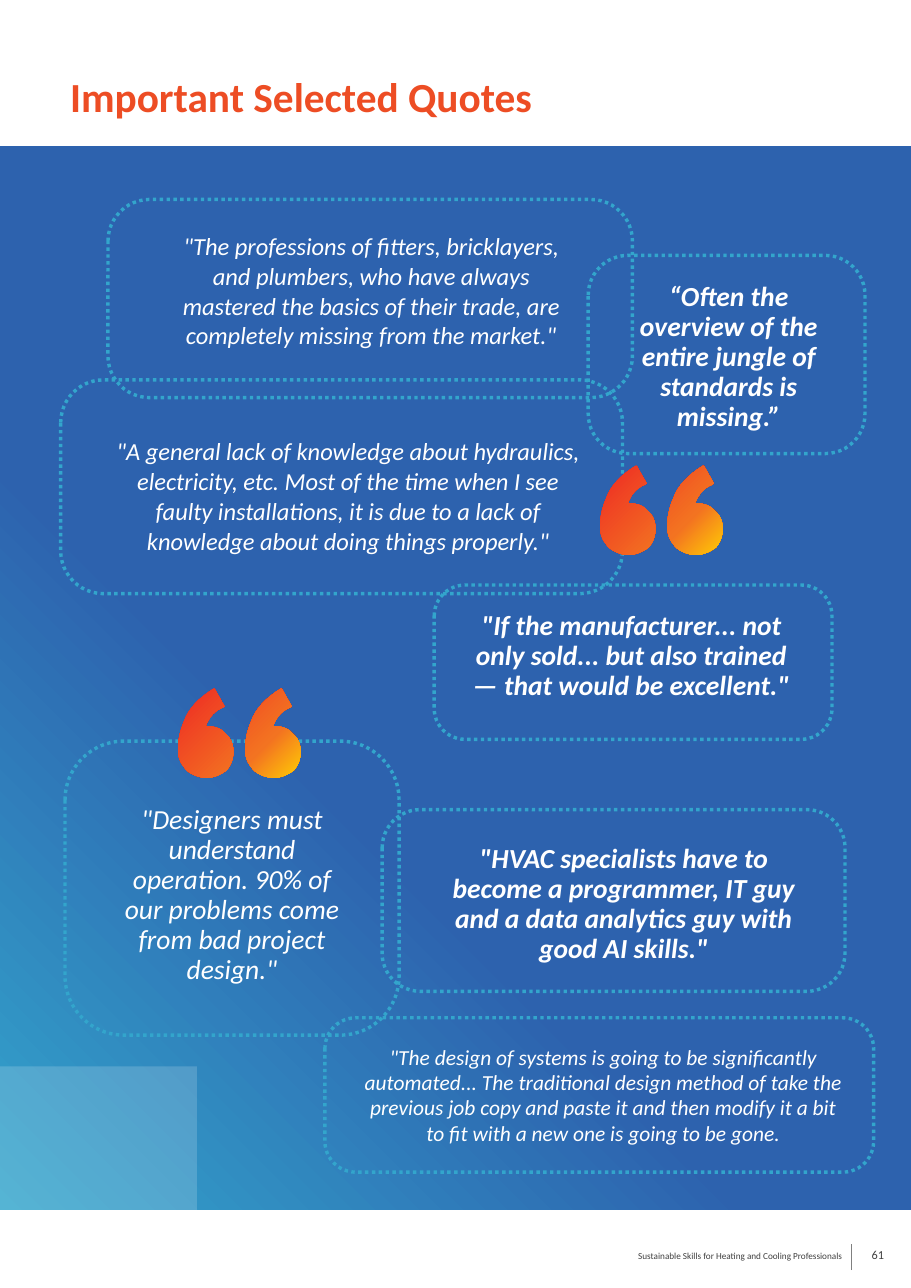
import pptx
import pptx.util
import pptx.dml.color
import pptx.enum.dml
import pptx.enum.shapes
import pptx.enum.text
import pptx.oxml
import pptx.oxml.ns

Cm, Pt = pptx.util.Cm, pptx.util.Pt
RGB = pptx.dml.color.RGBColor.from_string
SHAPE = pptx.enum.shapes.MSO_SHAPE
ALIGN = pptx.enum.text.PP_ALIGN
ANCHOR = pptx.enum.text.MSO_ANCHOR
qn = pptx.oxml.ns.qn
NS = pptx.oxml.ns.nsdecls("a")

COLORS = {
    "blue": "2D62AE", "aqua": "33A5CC", "white": "FFFFFF", "title": "ED4D24",
    "red": "EE2D24", "orange": "F37321", "yellow": "FFCD05",
    "text": "404040", "rule": "808080",
}


def write(box, words, size, color, align, bold=False, italic=False, lead=None):
    frame = box.text_frame
    frame.word_wrap = True
    para = frame.paragraphs[0]
    para.alignment = align
    para.space_before = Pt(0)
    if lead:
        para.line_spacing = Pt(lead)
    run = para.add_run()
    run.text = words
    font = run.font
    font.name, font.size, font.bold, font.italic = "Calibri", Pt(size), bold, italic
    font.color.rgb = RGB(COLORS[color])


def shade(shape, stops, angle):
    shape.shadow.inherit = False
    shape.line.fill.background()
    shape.fill.gradient()
    shape.fill.gradient_angle = angle
    items = shape._element.spPr.find(".//" + qn("a:gsLst"))
    for old in list(items):
        items.remove(old)
    for pos, color in stops:
        items.append(pptx.oxml.parse_xml(
            f'<a:gs {NS} pos="{pos * 1000}"><a:srgbClr val="{COLORS[color]}"/></a:gs>'))


prs = pptx.Presentation()
prs.slide_width, prs.slide_height = Cm(21), Cm(29.7)
slide = prs.slides.add_slide(prs.slide_layouts[5])
shapes = slide.shapes

# Title
title = shapes.title
title.left, title.top, title.width, title.height = Cm(1.36), Cm(1.75), Cm(15.5), Cm(1.5)
title.text_frame.vertical_anchor = ANCHOR.TOP
write(title, "Important Selected Quotes", 27, "title", ALIGN.LEFT, bold=True, lead=26)

# Blue panel
panel = shapes.add_shape(SHAPE.RECTANGLE, Cm(0), Cm(3.37), Cm(21), Cm(24.53))
shade(panel, [(62, "blue"), (100, "aqua")], 225)

# Pale corner block
block = shapes.add_shape(SHAPE.RECTANGLE, Cm(0), Cm(24.59), Cm(4.54), Cm(3.31))
block.shadow.inherit = False
block.line.fill.background()
block.fill.solid()
block.fill.fore_color.rgb = RGB(COLORS["white"])
tint = block._element.spPr.find(".//" + qn("a:srgbClr"))
tint.append(pptx.oxml.parse_xml(f'<a:alpha {NS} val="17000"/>'))

# Quotes: frame box, corner, text box, size, bold, line spacing, words
QUOTES = [
    ((13.56, 5.89, 6.38, 4.57), 0.2, (14.12, 6.38, 5.36, 5.23), 18, True, 19.6,
     "“Often the overview of the entire jungle of standards is missing.”"),
    ((2.49, 4.6, 12.09, 4.57), 0.21, (3.76, 5.18, 9.6, 4.5), 16, False, 19.6,
     '"The professions of fitters, bricklayers, and plumbers, who have always '
     'mastered the basics of their trade, are completely missing from the market."'),
    ((1.4, 8.76, 12.95, 4.93), 0.2, (2.26, 9.91, 11.53, 3.78), 16, False, 19.6,
     '"A general lack of knowledge about hydraulics, electricity, etc. Most of the '
     'time when I see faulty installations, it is due to a lack of knowledge about '
     'doing things properly."'),
    ((10.01, 13.49, 9.17, 3.56), 0.2, (10.54, 13.97, 8.03, 3.1), 18, True, 19.6,
     '"If the manufacturer... not only sold... but also trained — that would be '
     'excellent."'),
    ((1.5, 17.09, 7.7, 6.78), 0.2, (2.34, 18.44, 6.02, 5.23), 18, False, 19.6,
     '"Designers must understand operation. 90% of our problems come from bad '
     'project design."'),
    ((8.81, 18.67, 10.67, 4.19), 0.21, (9.91, 19.33, 8.94, 3.81), 18, True, 19.6,
     '"HVAC specialists have to become a programmer, IT guy and a data analytics '
     'guy with good AI skills."'),
    ((7.49, 23.47, 12.65, 3.56), 0.2, (8.13, 23.95, 11.56, 3.28), 14, False, 16.6,
     '"The design of systems is going to be significantly automated... The '
     'traditional design method of take the previous job copy and paste it and then '
     'modify it a bit to fit with a new one is going to be gone.'),
]
for area, corner, place, size, bold, lead, words in QUOTES:
    frame = shapes.add_shape(SHAPE.ROUNDED_RECTANGLE, *map(Cm, area))
    frame.adjustments[0] = corner
    frame.shadow.inherit = False
    frame.fill.background()
    frame.line.color.rgb = RGB(COLORS["aqua"])
    frame.line.width = Pt(2.25)
    frame.line.dash_style = pptx.enum.dml.MSO_LINE.ROUND_DOT
    box = shapes.add_textbox(*map(Cm, place))
    write(box, words, size, "white", ALIGN.CENTER, bold, True, lead)

# Outline of one quote mark: curves (six numbers) and lines (two numbers)
START = (26, 81)
PARTS = [
    (24, 81), (16, 80, 9, 77, 5, 71), (1, 66, -1, 60, 0, 51), (0, 45, 2, 37, 5, 30),
    (9, 18, 19, 8, 32, 0), (33, 0), (42, 16), (41, 17), (33, 20, 28, 26, 25, 34),
    (33, 34, 39, 36, 43, 41), (48, 45, 50, 51, 50, 57), (50, 64, 48, 69, 44, 74),
    (39, 78, 32, 81, 26, 81),
]
STEPS = 8
curve = [START]
for part in PARTS:
    if len(part) == 2:
        curve.append(part)
        continue
    knots = [curve[-1], part[:2], part[2:4], part[4:]]
    for step in range(1, STEPS + 1):
        t = step / STEPS
        mix = [(1 - t) ** 3, 3 * t * (1 - t) ** 2, 3 * t * t * (1 - t), t ** 3]
        curve.append(tuple(sum(m * k[i] for m, k in zip(mix, knots)) for i in (0, 1)))

# Pairs of quote marks
FINE, GAP = 100, 61
for left, top in [(13.84, 10.74), (4.11, 15.88)]:
    pen = None
    for shift in (0, GAP):
        dots = [((x + shift) * FINE, y * FINE) for x, y in curve]
        if pen is None:
            pen = shapes.build_freeform(*dots[0], scale=Cm(0.0254) / FINE)
        else:
            pen.move_to(*dots[0])
        pen.add_line_segments(dots[1:], close=True)
    mark = pen.convert_to_shape(Cm(left), Cm(top))
    shade(mark, [(3, "red"), (68, "orange"), (100, "yellow")], 315)

# Footer
foot = shapes.add_textbox(Cm(6.15), Cm(28.7), Cm(13.51), Cm(0.5))
write(foot, "Sustainable Skills for Heating and Cooling Professionals", 6, "text", ALIGN.RIGHT)
rule = shapes.add_connector(pptx.enum.shapes.MSO_CONNECTOR.STRAIGHT,
                            Cm(19.63), Cm(29.29), Cm(19.63), Cm(28.68))
rule.line.color.rgb = RGB(COLORS["rule"])
rule.line.width = Pt(0.75)
rule._element.spPr.append(pptx.oxml.parse_xml(f"<a:effectLst {NS}/>"))
page = shapes.add_textbox(Cm(19.66), Cm(28.55), Cm(0.97), Cm(0.76))
page.text_frame.vertical_anchor = ANCHOR.MIDDLE
write(page, "61", 8, "text", ALIGN.RIGHT)

prs.save("out.pptx")
